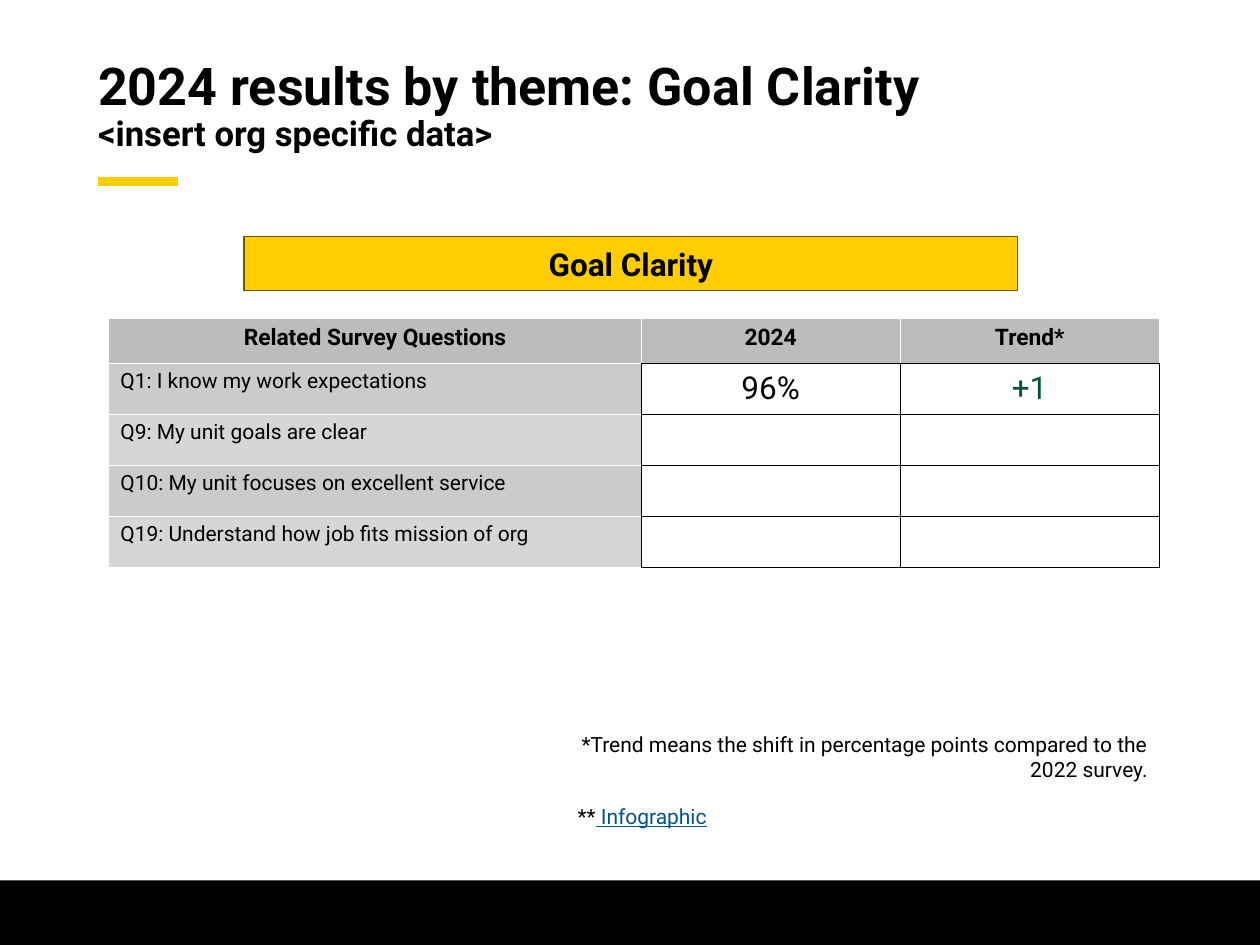
from lxml.etree import SubElement
from pptx import Presentation
from pptx.dml.color import RGBColor
from pptx.enum.shapes import MSO_CONNECTOR, MSO_SHAPE
from pptx.enum.text import MSO_ANCHOR, MSO_AUTO_SIZE, PP_ALIGN
from pptx.oxml.ns import qn
from pptx.util import Pt

BLACK = RGBColor(0x00, 0x00, 0x00)
WHITE = RGBColor(0xFF, 0xFF, 0xFF)
GOLD = RGBColor(0xFF, 0xCD, 0x00)
DARK_GOLD = RGBColor(0x70, 0x5A, 0x00)
HEADER_GRAY = RGBColor(0xBB, 0xBC, 0xBC)
ROW_GRAYS = (RGBColor(0xCA, 0xCC, 0xCB), RGBColor(0xD6, 0xD6, 0xD6))
GREEN = RGBColor(0x00, 0x56, 0x32)
BLUE = RGBColor(0x00, 0x55, 0x8C)

HEADERS = ("Related Survey Questions", "2024", "Trend*")
ROWS = (
    ("Q1: I know my work expectations", "96%", "+1"),
    ("Q9: My unit goals are clear", "", ""),
    ("Q10: My unit focuses on excellent service", "", ""),
    ("Q19: Understand how job fits mission of org", "", ""),
)
HEADER_FORMAT = {"size": Pt(13), "bold": True}
QUESTION_FORMAT = {"size": Pt(12)}
NOTE_FORMAT = {"size": Pt(12)}


class SlideBuilder:
    font = "Roboto"
    border_width = Pt(0.25)

    def __init__(self, slide):
        self.slide = slide

    def add_run(self, paragraph, text, color=BLACK, **formats):
        run = paragraph.add_run()
        run.text = text
        run.font.color.rgb = color
        for name, value in {"name": self.font, "bold": False, **formats}.items():
            setattr(run.font, name, value)

    def format_frame(self, frame, **formats):
        for name, value in {"word_wrap": True, "auto_size": MSO_AUTO_SIZE.NONE, **formats}.items():
            setattr(frame, name, value)

    def place(self, shape, left, top, width, height):
        box = {"left": left, "top": top, "width": width, "height": height}
        for name, value in box.items():
            setattr(shape, name, Pt(value))

    def title(self, heading, subheading, *box):
        shape = self.slide.shapes.title
        self.place(shape, *box)
        # The bottom margin lifts the two lines above the accent line.
        self.format_frame(shape.text_frame, vertical_anchor=MSO_ANCHOR.MIDDLE, margin_left=0,
                          margin_right=0, margin_top=0, margin_bottom=Pt(29))
        paragraph = shape.text_frame.paragraphs[0]
        paragraph.alignment = PP_ALIGN.LEFT
        paragraph.line_spacing = 0.9
        self.add_run(paragraph, heading, size=Pt(29.7), bold=True)
        paragraph.add_line_break()
        self.add_run(paragraph, subheading, size=Pt(19.8), bold=True)

    def line(self, left, top, right, color, width):
        connector = self.slide.shapes.add_connector(
            MSO_CONNECTOR.STRAIGHT, Pt(left), Pt(top), Pt(right), Pt(top))
        connector.line.color.rgb = color
        connector.line.width = Pt(width)
        SubElement(connector._element.spPr, qn("a:effectLst"))

    def rectangle(self, *box, fill, line=None, text=None):
        shape = self.slide.shapes.add_shape(MSO_SHAPE.RECTANGLE, *map(Pt, box))
        shape.shadow.inherit = False
        shape.fill.solid()
        shape.fill.fore_color.rgb = fill
        if line is None:
            shape.line.fill.background()
        else:
            shape.line.color.rgb = line
            shape.line.width = Pt(1)
        if text:
            self.format_frame(shape.text_frame, vertical_anchor=MSO_ANCHOR.MIDDLE)
            paragraph = shape.text_frame.paragraphs[0]
            paragraph.alignment = PP_ALIGN.CENTER
            self.add_run(paragraph, text, size=Pt(18), bold=True)

    def note(self, *box, runs):
        """Add a right-aligned text box of (text, formats) runs."""
        frame = self.slide.shapes.add_textbox(*map(Pt, box)).text_frame
        self.format_frame(frame)
        paragraph = frame.paragraphs[0]
        paragraph.alignment = PP_ALIGN.RIGHT
        for text, formats in runs:
            self.add_run(paragraph, text, **NOTE_FORMAT, **formats)

    def cell(self, cell, text, fill, borders, align, anchor, **formats):
        """Fill a cell; borders are the left, right, top and bottom colours."""
        for side, color in zip("LRTB", borders):
            line = SubElement(cell._tc.get_or_add_tcPr(), qn(f"a:ln{side}"),
                              w=str(self.border_width))
            SubElement(SubElement(line, qn("a:solidFill")), qn("a:srgbClr"), val=str(color))
        cell.fill.solid()
        cell.fill.fore_color.rgb = fill
        cell.vertical_anchor = anchor
        cell.margin_left = cell.margin_right = Pt(6.8)
        cell.margin_top = cell.margin_bottom = Pt(3.4)
        paragraph = cell.text_frame.paragraphs[0]
        paragraph.alignment = align
        if text:
            self.add_run(paragraph, text, **formats)

    def results_table(self, left, top, widths, header_height, row_height):
        height = header_height + row_height * len(ROWS)
        table = self.slide.shapes.add_table(
            len(ROWS) + 1, len(widths), Pt(left), Pt(top), Pt(sum(widths)), Pt(height)).table
        for column, width in zip(table.columns, widths):
            column.width = Pt(width)
        for row in table.rows:
            row.height = Pt(row_height)
        table.rows[0].height = Pt(header_height)

        for column, text in enumerate(HEADERS):
            bottom = BLACK if column else WHITE
            self.cell(table.cell(0, column), text, HEADER_GRAY, (WHITE, WHITE, WHITE, bottom),
                      PP_ALIGN.CENTER, MSO_ANCHOR.TOP, **HEADER_FORMAT)
        for row, (question, *values) in enumerate(ROWS, start=1):
            self.cell(table.cell(row, 0), question, ROW_GRAYS[(row - 1) % 2],
                      (WHITE, BLACK, WHITE, WHITE), PP_ALIGN.LEFT, MSO_ANCHOR.TOP,
                      **QUESTION_FORMAT)
            for column, (value, color) in enumerate(zip(values, (BLACK, GREEN)), start=1):
                self.cell(table.cell(row, column), value, WHITE, (BLACK,) * 4,
                          PP_ALIGN.CENTER, MSO_ANCHOR.MIDDLE, size=Pt(18), color=color)


def main():
    presentation = Presentation()
    presentation.slide_width, presentation.slide_height = Pt(720), Pt(540)
    builder = SlideBuilder(presentation.slides.add_slide(presentation.slide_layouts[5]))

    builder.line(56, 103.7, 101.5, GOLD, 5)
    builder.rectangle(0, 503, 720, 37, fill=BLACK)
    builder.title("2024 results by theme: Goal Clarity", "<insert org specific data>",
                  56, 41.8, 608, 68.4)
    builder.results_table(62, 182, (304.4, 148, 148), 25.4, 29.2)
    builder.rectangle(139.5, 135.2, 442, 30.8, fill=GOLD, line=DARK_GOLD, text="Goal Clarity")
    builder.note(298, 414.3, 365, 51, runs=[
        ("*Trend means the shift in percentage points compared to the 2022 survey.", {})])
    builder.note(320, 455.5, 91, 22, runs=[
        ("**", {}), (" Infographic", {"color": BLUE, "underline": True})])
    presentation.save("out.pptx")


if __name__ == "__main__":
    main()
